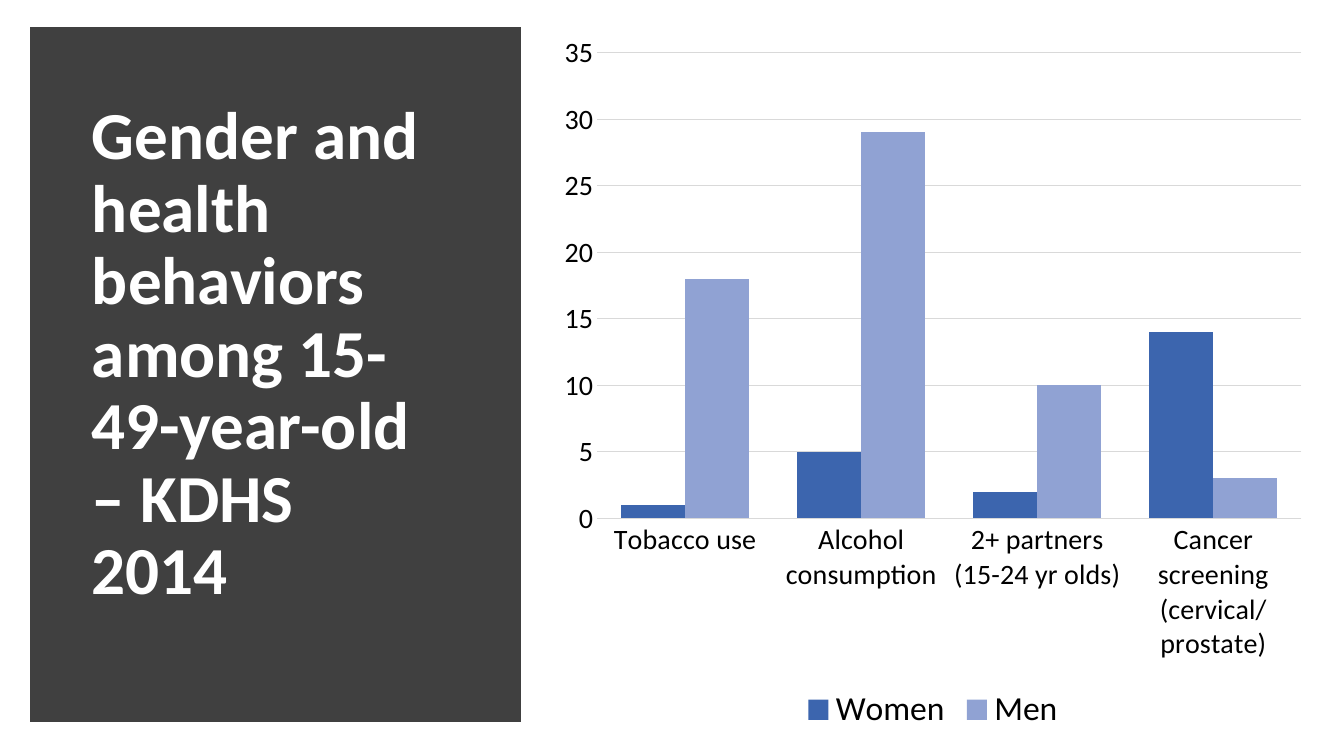
import lxml.etree
import pptx
import pptx.util
import pptx.chart.data
import pptx.dml.color
import pptx.enum.chart
import pptx.enum.shapes
import pptx.enum.text
import pptx.oxml.ns

RGBColor = pptx.dml.color.RGBColor
PANEL_GREY = RGBColor(0x40, 0x40, 0x40)
GRID_GREY = RGBColor(0xD9, 0xD9, 0xD9)
WHITE = RGBColor(0xFF, 0xFF, 0xFF)
BLACK = RGBColor(0x00, 0x00, 0x00)
WOMEN_BLUE = RGBColor(0x3C, 0x65, 0xAE)
MEN_BLUE = RGBColor(0x90, 0xA2, 0xD3)
FONT = "Calibri"

CATEGORIES = [
    "Tobacco use",
    "Alcohol consumption",
    "2+ partners (15-24 yr olds)",
    "Cancer screening (cervical/ prostate)",
]
SERIES = [
    ("Women", [1, 5, 2, 14], WOMEN_BLUE),
    ("Men", [18, 29, 10, 3], MEN_BLUE),
]


def px(length):
    """Turn whole pixels, 96 to the inch, into EMU."""
    return pptx.util.Emu(length * 9525)


def style_font(font, size, color=BLACK, bold=False):
    """Set the face, size, colour and weight of a font."""
    font.name = FONT
    font.size = pptx.util.Pt(size)
    font.bold = bold
    font.color.rgb = color


def style_line(line, color, width):
    """Draw a line in one solid colour."""
    line.color.rgb = color
    line.width = pptx.util.Pt(width)


def sharpen_corners(shape):
    """Give the outline of a shape mitred corners."""
    outline = shape.element.spPr.find(pptx.oxml.ns.qn("a:ln"))
    lxml.etree.SubElement(outline, pptx.oxml.ns.qn("a:miter"), lim="800000")


def write_text(frame, text, line_spacing=1.0, **font_format):
    """Put one formatted, left-aligned paragraph in a text frame."""
    frame.word_wrap = True
    frame.auto_size = pptx.enum.text.MSO_AUTO_SIZE.NONE
    frame.vertical_anchor = pptx.enum.text.MSO_ANCHOR.MIDDLE
    para = frame.paragraphs[0]
    para.alignment = pptx.enum.text.PP_ALIGN.LEFT
    para.line_spacing = line_spacing
    span = para.add_run()
    span.text = text
    style_font(span.font, **font_format)


def add_title_panel(page, left, top, width, height):
    """Place the dark panel with the slide title in front of it."""
    panel = page.shapes.add_shape(
        pptx.enum.shapes.MSO_SHAPE.RECTANGLE, px(left), px(top), px(width), px(height)
    )
    panel.shadow.inherit = False
    panel.fill.solid()
    panel.fill.fore_color.rgb = PANEL_GREY
    style_line(panel.line, PANEL_GREY, 10)
    sharpen_corners(panel)

    title = page.shapes.title
    title.element.addprevious(panel.element)
    title.left, title.top = px(left + 43), px(top + 46)
    title.width, title.height = px(width - 105), px(height - 128)
    write_text(
        title.text_frame,
        "Gender and health behaviors among 15-49-year-old – KDHS 2014",
        line_spacing=0.9,
        size=48,
        color=WHITE,
        bold=True,
    )


def style_axis(axis):
    """Give an axis its labels and no tick marks."""
    axis.major_tick_mark = pptx.enum.chart.XL_TICK_MARK.NONE
    axis.minor_tick_mark = pptx.enum.chart.XL_TICK_MARK.NONE
    style_font(axis.tick_labels.font, 20)


def add_behavior_chart(page, left, top, width, height):
    """Place the clustered columns comparing women and men."""
    data = pptx.chart.data.CategoryChartData(number_format="General")
    data.categories = CATEGORIES
    for name, values, color in SERIES:
        data.add_series(name, values)
    chart = page.shapes.add_chart(
        pptx.enum.chart.XL_CHART_TYPE.COLUMN_CLUSTERED,
        px(left), px(top), px(width), px(height), data,
    ).chart
    chart.has_title = False
    style_font(chart.font, 10)

    plot = chart.plots[0]
    plot.gap_width = 75
    plot.overlap = 0
    plot.vary_by_categories = False
    for series, (name, values, color) in zip(plot.series, SERIES):
        series.format.fill.solid()
        series.format.fill.fore_color.rgb = color

    style_axis(chart.category_axis)
    style_line(chart.category_axis.format.line, GRID_GREY, 0.75)

    value_axis = chart.value_axis
    style_axis(value_axis)
    value_axis.minimum_scale = 0
    value_axis.maximum_scale = 35
    value_axis.major_unit = 5
    value_axis.format.line.fill.background()
    value_axis.has_major_gridlines = True
    style_line(value_axis.major_gridlines.format.line, GRID_GREY, 0.75)

    chart.has_legend = True
    chart.legend.position = pptx.enum.chart.XL_LEGEND_POSITION.BOTTOM
    chart.legend.include_in_layout = False
    style_font(chart.legend.font, 24)


def main():
    """Build the one-slide deck and save it."""
    deck = pptx.Presentation()
    deck.slide_width, deck.slide_height = px(1280), px(720)
    page = deck.slides.add_slide(deck.slide_layouts.get_by_name("Title Only"))
    add_title_panel(page, 35, 32, 455, 649)
    add_behavior_chart(page, 523, 20, 731, 682)
    deck.save("out.pptx")


if __name__ == "__main__":
    main()
